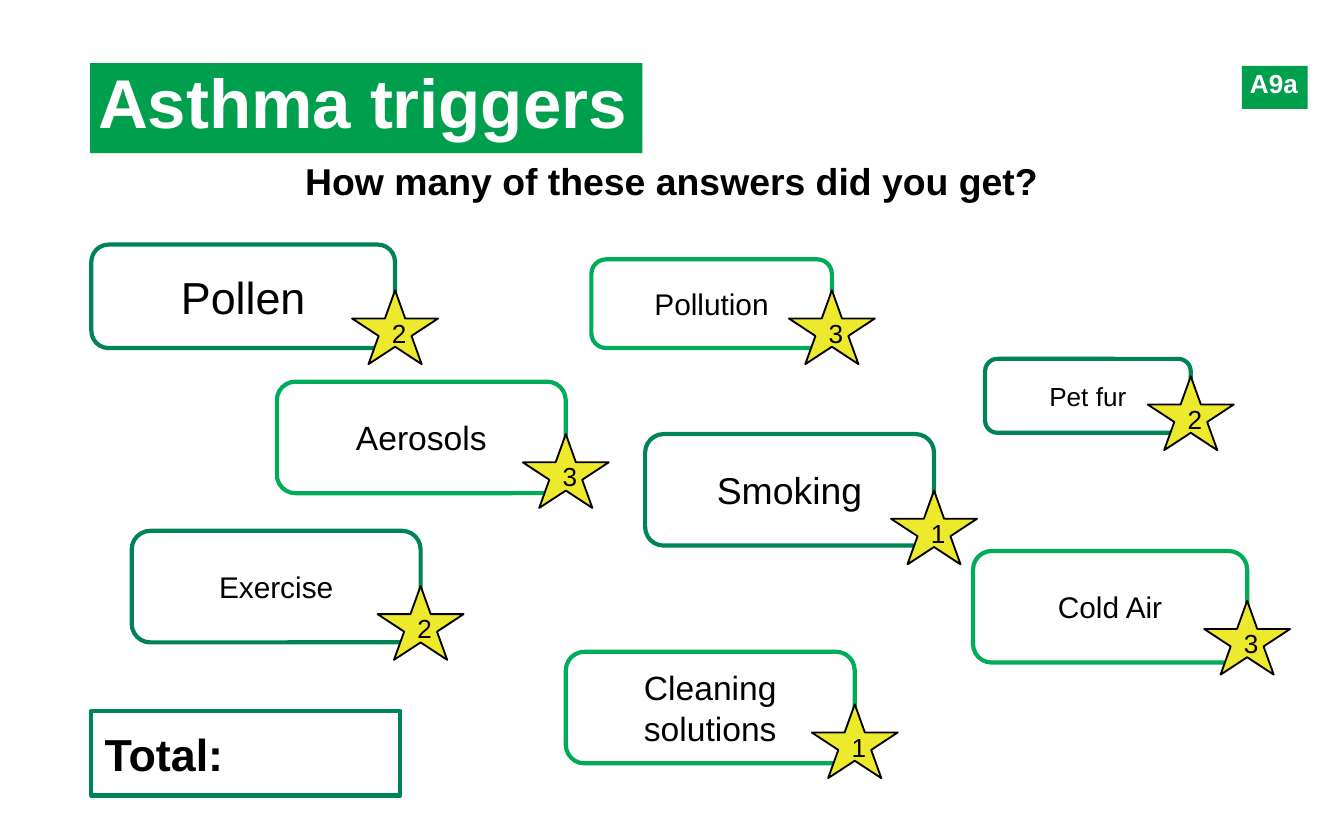
from pptx import Presentation
from pptx import util as u
from pptx.dml.color import RGBColor
from pptx.enum import shapes, text

WIDE, HIGH = 10, 6.25
GREEN, DARK, LIGHT = "009F4D", "008453", "00AC58"
GOLD, BLACK, WHITE = "EDE92C", "000000", "FFFFFF"
STAR_W, STAR_H = 0.64, 0.55

# Content: label, points, text size, line colour, box, top of star
TRIGGERS = [
    ("Pollen", 2, 24, DARK, (0.68, 1.82, 2.26, 0.77), 2.16),
    ("Pollution", 3, 16, LIGHT, (4.4, 1.93, 1.79, 0.66), 2.16),
    ("Pet fur", 2, 14, DARK, (7.33, 2.67, 1.53, 0.55), 2.8),
    ("Smoking", 1, 20, DARK, (4.8, 3.23, 2.15, 0.83), 3.65),
    ("Aerosols", 3, 18, LIGHT, (2.06, 2.84, 2.15, 0.83), 3.23),
    ("Cold Air", 3, 16, LIGHT, (7.24, 4.1, 2.04, 0.83), 4.47),
    ("Exercise", 2, 16, DARK, (0.98, 3.95, 2.15, 0.83), 4.36),
    ("Cleaning solutions", 1, 18, LIGHT, (4.21, 4.85, 2.15, 0.83), 5.24),
]
# Green tags: label, text size, box
TAGS = [
    ("Asthma triggers", 37, (0.67, 0.47, 4.11, 0.67)),
    ("A9a", 14, (9.24, 0.49, 0.49, 0.32)),
]
QUESTION = "How many of these answers did you get?"
KIND = shapes.MSO_SHAPE
LEFT, MID = text.PP_ALIGN.LEFT, text.PP_ALIGN.CENTER

deck = Presentation()
deck.slide_width, deck.slide_height = u.Inches(WIDE), u.Inches(HIGH)
slide = deck.slides.add_slide(deck.slide_layouts[6])


def rgb(code):
    return RGBColor.from_string(code)


def write(shape, words, size, color=BLACK, bold=False, align=MID):
    para = shape.text_frame.paragraphs[0]
    para.alignment = align
    run = para.add_run()
    run.text = words
    font = run.font
    font.name, font.size, font.bold = "Arial", u.Pt(size), bold
    font.color.rgb = rgb(color)
    return para


def draw(kind, box, fill=None, line=None, width=2.25):
    shape = slide.shapes.add_shape(kind, *map(u.Inches, box))
    shape.shadow.inherit = False
    if fill:
        shape.fill.solid()
        shape.fill.fore_color.rgb = rgb(fill)
    else:
        shape.fill.background()
    if line:
        shape.line.color.rgb = rgb(line)
        shape.line.width = u.Pt(width)
    else:
        shape.line.fill.background()
    shape.text_frame.vertical_anchor = text.MSO_ANCHOR.MIDDLE
    return shape


def inset(frame, *sides):
    (frame.margin_left, frame.margin_top,
     frame.margin_right, frame.margin_bottom) = map(u.Inches, sides)


# Title and sheet number
for words, size, box in TAGS:
    tag = draw(KIND.RECTANGLE, box, fill=GREEN)
    frame = tag.text_frame
    frame.word_wrap = False
    frame.auto_size = text.MSO_AUTO_SIZE.SHAPE_TO_FIT_TEXT
    frame.vertical_anchor = text.MSO_ANCHOR.TOP
    inset(frame, 0.06, 0.04, 0.06, 0.06)
    write(tag, words, size, WHITE, True, LEFT).line_spacing = 0.9

# Question
ask = slide.shapes.add_textbox(0, u.Inches(1.14), u.Inches(WIDE), u.Inches(0.5))
ask.text_frame.word_wrap = True
inset(ask.text_frame, 0.08, 0.04, 0.08, 0.04)
para = write(ask, QUESTION, 20, bold=True)
para.space_after = u.Pt(5)

# Answers, each with a star centred on its right edge
for words, points, size, color, box, top in TRIGGERS:
    write(draw(KIND.ROUNDED_RECTANGLE, box, line=color), words, size)
    edge = box[0] + box[2]
    spot = (edge - STAR_W / 2, top, STAR_W, STAR_H)
    star = draw(KIND.STAR_5_POINT, spot, GOLD, BLACK, 1)
    write(star, str(points), 14)

# Total
total = draw(KIND.RECTANGLE, (0.68, 5.29, 2.3, 0.63), line=DARK)
write(total, "Total:", 24, bold=True, align=LEFT)

deck.save("out.pptx")
